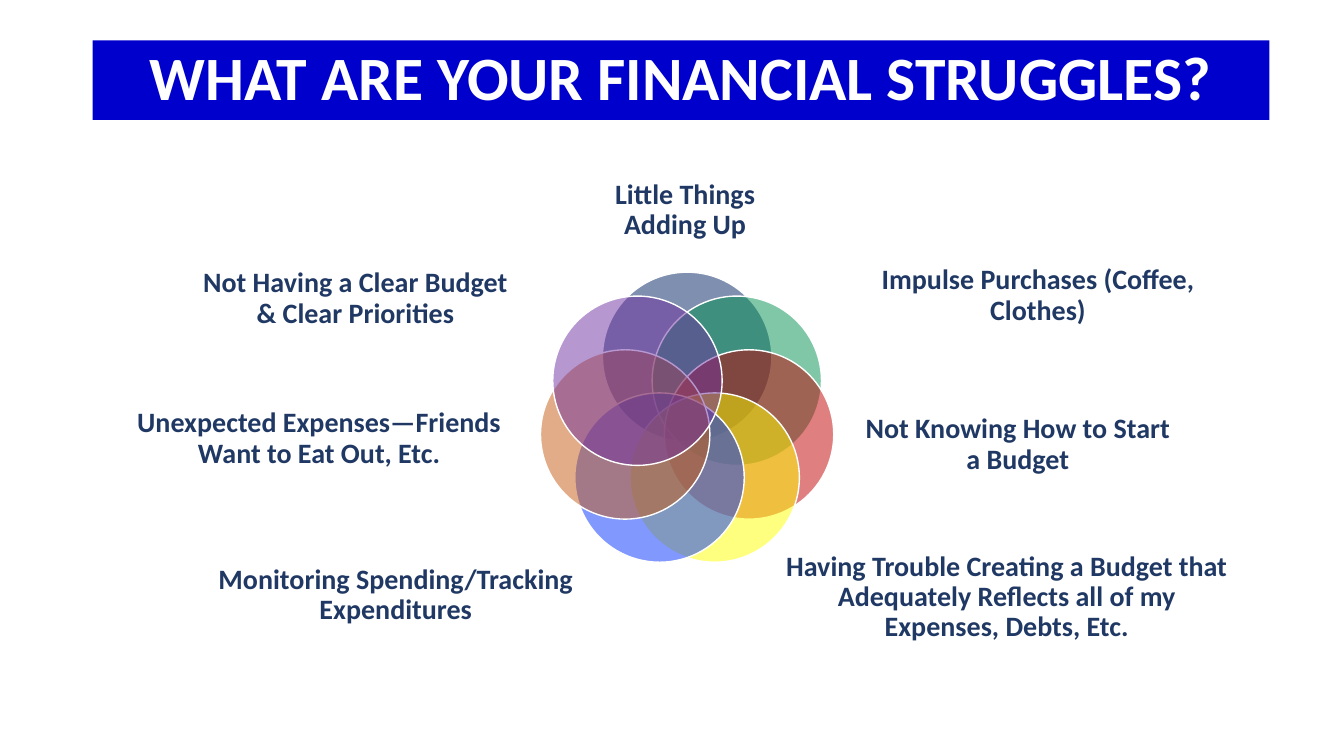
from dataclasses import dataclass
from math import cos, pi, sin

from lxml import etree
from pptx import Presentation
from pptx.dml.color import RGBColor as RGB
from pptx.enum.shapes import MSO_SHAPE as SHAPE
from pptx.enum.text import MSO_ANCHOR as ANCHOR, PP_ALIGN as ALIGN
from pptx.oxml.ns import qn
from pptx.util import Inches, Pt


@dataclass(frozen=True)
class Theme:
    font: str = "Calibri"
    banner: str = "0000CC"
    white: str = "FFFFFF"
    label: str = "203864"
    title_size: int = 44
    label_size: int = 20
    opacity: int = 50


THEME = Theme()

# Clockwise from the top: circle colour, label box (left, top, width, height), label
STRUGGLES = [
    ("002060", (5.83, 1.57, 1.93, 1.03), "Little Things Adding Up"),
    ("009051", (8.73, 2.37, 3.13, 1.13), "Impulse Purchases (Coffee, Clothes)"),
    ("C00000", (8.54, 3.81, 3.11, 1.21), "Not Knowing How to Start a Budget"),
    ("FFFF00", (7.76, 5.37, 4.45, 1.11),
     "Having Trouble Creating a Budget that Adequately Reflects all of my Expenses, Debts, Etc."),
    ("0432FF", (2.07, 5.35, 3.71, 1.11), "Monitoring Spending/Tracking Expenditures"),
    ("C55A11", (1.31, 3.75, 3.71, 1.21), "Unexpected Expenses—Friends Want to Eat Out, Etc."),
    ("7030A0", (1.97, 2.4, 3.11, 1.13), "Not Having a Clear Budget & Clear Priorities"),
]


def set_attrs(obj, values):
    for name, value in values.items():
        setattr(obj, name, value)


def write(sp, text, size, color, margin):
    """Centre one bold paragraph in a shape."""
    tf = sp.text_frame
    set_attrs(tf, {"word_wrap": True, "vertical_anchor": ANCHOR.MIDDLE})
    for side in ("left", "right", "top", "bottom"):
        setattr(tf, f"margin_{side}", Inches(margin))
    p = tf.paragraphs[0]
    set_attrs(p, {"alignment": ALIGN.CENTER, "line_spacing": 0.9})
    r = p.add_run()
    r.text = text
    set_attrs(r.font, {"name": THEME.font, "size": Pt(size), "bold": True})
    r.font.color.rgb = RGB.from_string(color)


def add_filled(shapes, kind, box, color):
    sp = shapes.add_shape(kind, *map(Inches, box))
    sp.shadow.inherit = False
    sp.fill.solid()
    sp.fill.fore_color.rgb = RGB.from_string(color)
    return sp


def add_banner(shapes, box):
    sp = add_filled(shapes, SHAPE.RECTANGLE, box, THEME.banner)
    sp.line.fill.background()
    write(sp, "WHAT ARE YOUR FINANCIAL STRUGGLES?", THEME.title_size, THEME.white, 0.05)


def add_circle(shapes, box, color):
    sp = add_filled(shapes, SHAPE.OVAL, box, color)
    sp.line.color.rgb = RGB.from_string(THEME.white)
    sp.line.width = Pt(1)
    rgb = sp.fill._xPr.find(qn("a:solidFill")).find(qn("a:srgbClr"))
    etree.SubElement(rgb, qn("a:alpha")).set("val", str(THEME.opacity * 1000))


def add_venn(shapes, box, diameter):
    """Spread overlapping circles evenly on a ring whose top touches the box."""
    left, top, width, ring = box
    for i, (color, label_box, label) in enumerate(STRUGGLES):
        angle = 2 * pi * i / len(STRUGGLES)
        x = left + (width - diameter) / 2 + ring * sin(angle)
        y = top + ring * (1 - cos(angle))
        add_circle(shapes, (x, y, diameter, diameter), color)
        tb = shapes.add_textbox(*map(Inches, label_box))
        write(tb, label, THEME.label_size, THEME.label, 0)


def main():
    prs = Presentation()
    set_attrs(prs, {"slide_width": Inches(13.33), "slide_height": Inches(7.5)})
    s = prs.slides.add_slide(prs.slide_layouts[6])

    # Title banner
    add_banner(s.shapes, (0.92, 0.4, 11.67, 0.79))

    # Circles and labels: left, top, width, ring radius
    add_venn(s.shapes.add_group_shape().shapes, (5.36, 2.7, 2.91, 0.63), 1.68)

    prs.save("out.pptx")


if __name__ == "__main__":
    main()
